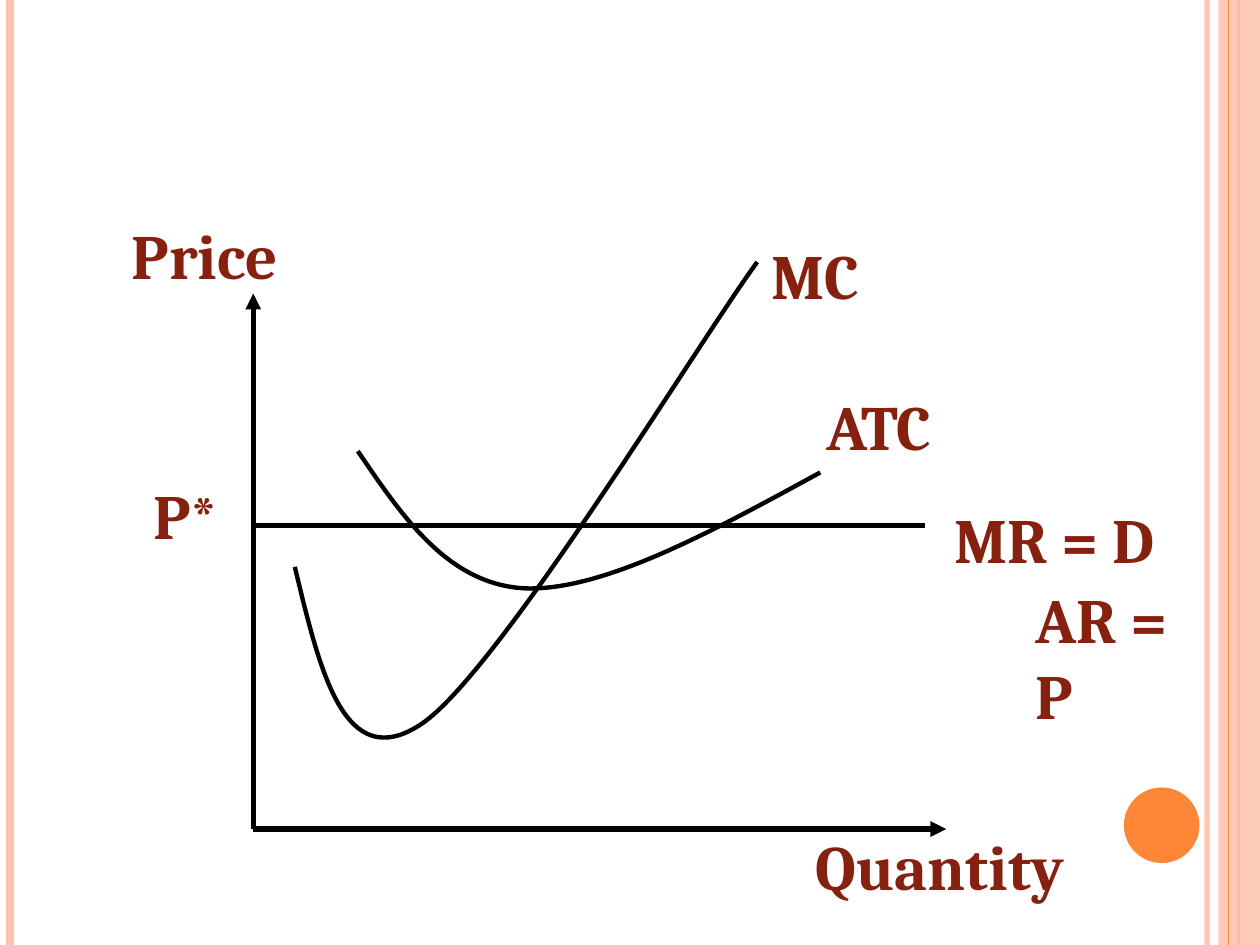
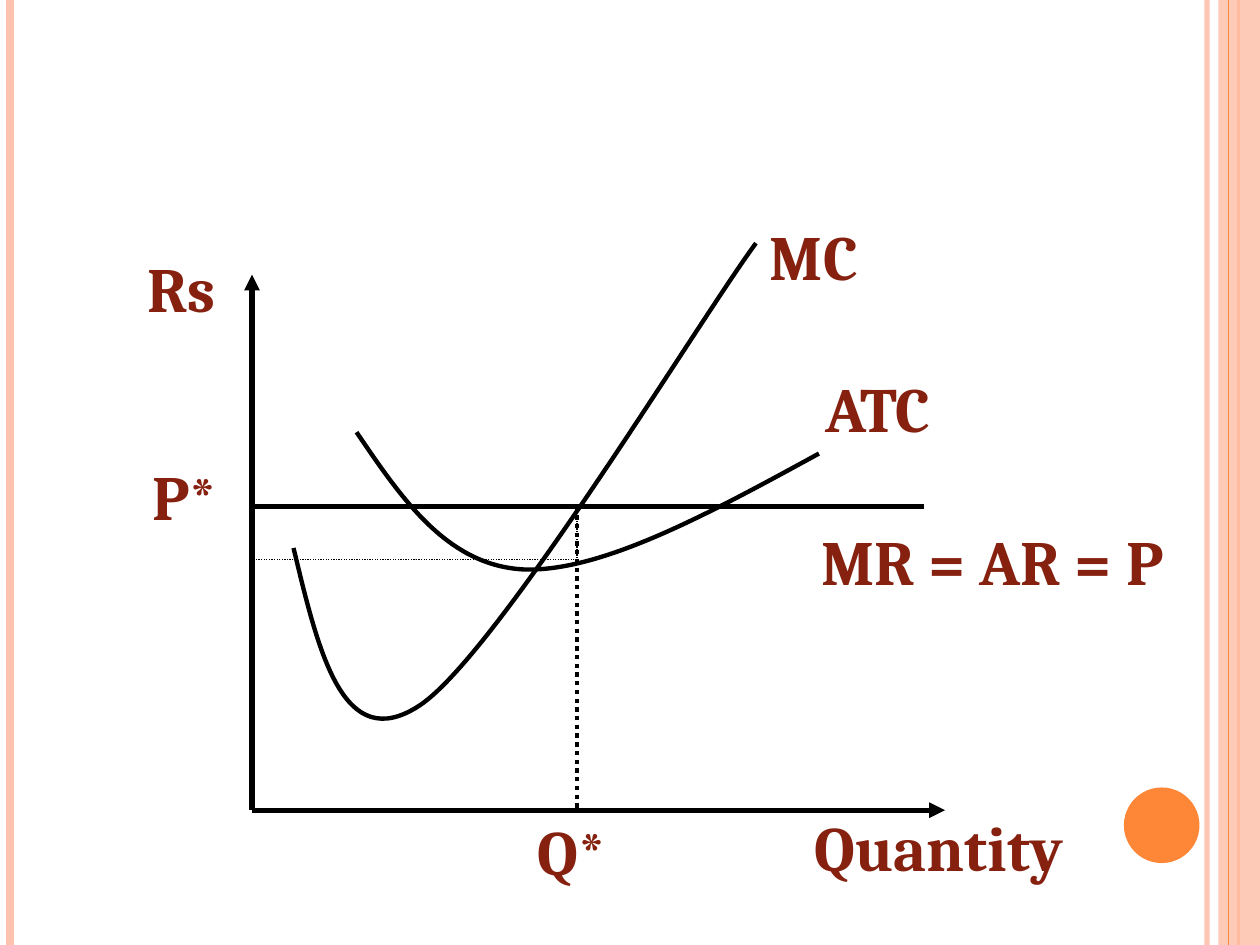
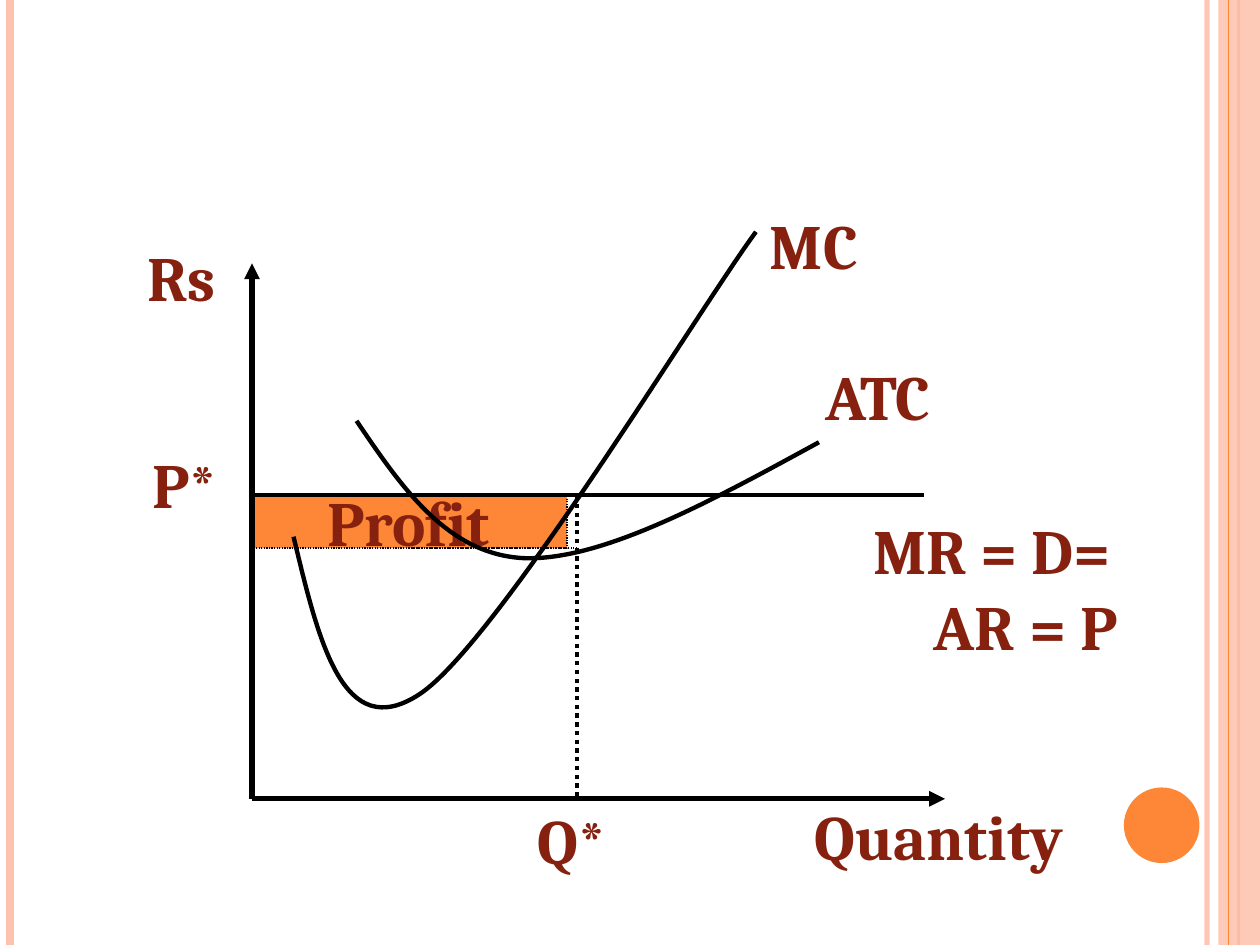
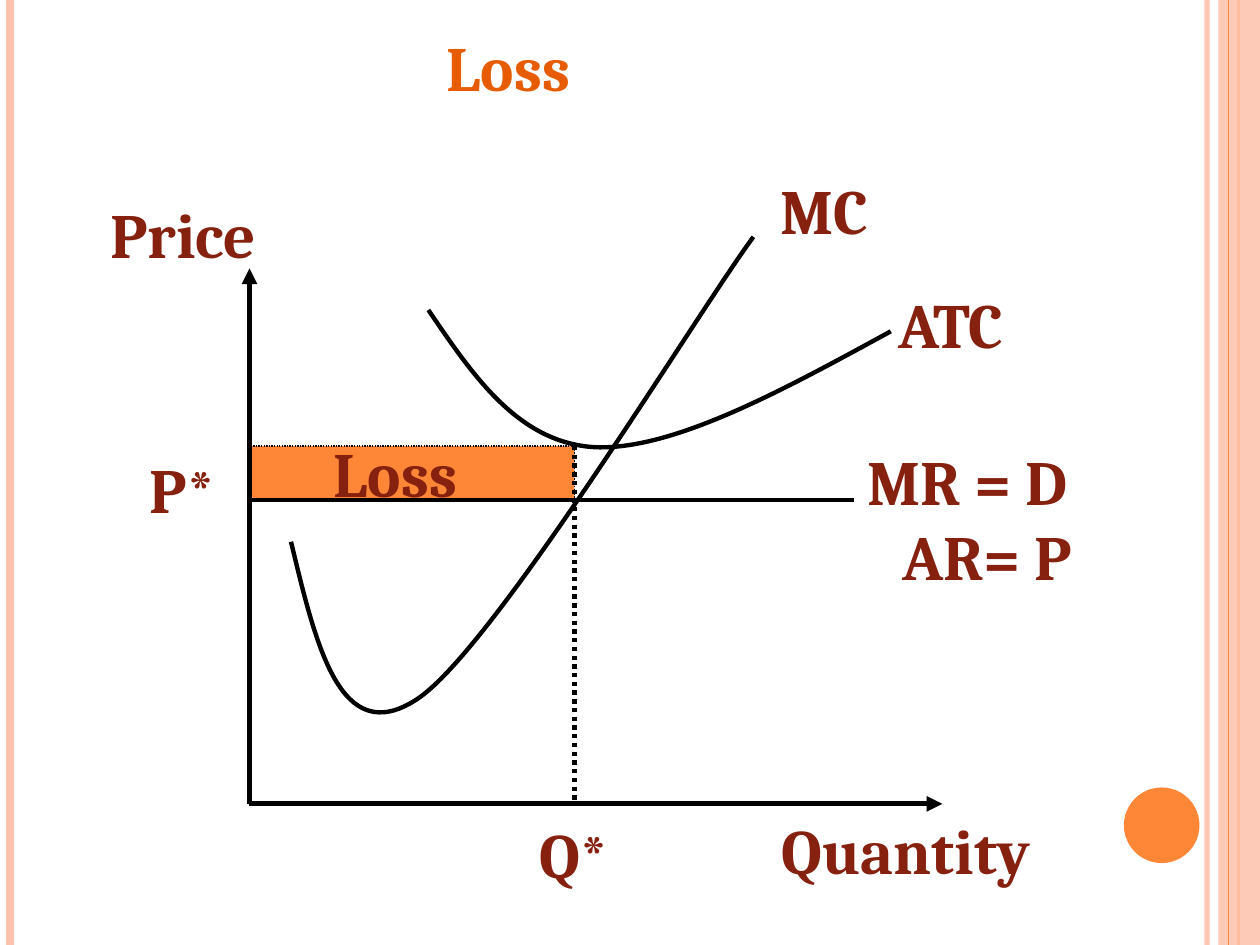
from lxml.etree import SubElement
from pptx import Presentation
from pptx.dml.color import RGBColor
from pptx.enum.dml import MSO_LINE
from pptx.enum.shapes import MSO_CONNECTOR, MSO_SHAPE
from pptx.enum.text import MSO_ANCHOR, MSO_AUTO_SIZE, PP_ALIGN
from pptx.oxml.ns import qn
from pptx.util import Inches, Pt

WIDE, HIGH = 10, 7.5
FONT, SIZE = "Cambria", 36
COLORS = {
    "ink": "000000", "paper": "FFFFFF", "label": "862110",
    "title": "E75C01", "accent": "FE8637", "pale": "FEC3AE",
}
MID, LEFT = PP_ALIGN.CENTER, PP_ALIGN.LEFT

# Master stripes: x, colour, points, opacity in percent
STRIPES = [
    (9.58, "pale", 3, 93), (0.08, "pale", 4.5, 100),
    (9.83, "accent", 1.5, 100), (9.75, "accent", 0.75, 100),
]

# Graph geometry: inches right of and above the origin of the axes
PRICE, COST = 2.41, 1.99
OUTPUT, AXIS_X, AXIS_Y = 2.58, 5.5, 4.25
MC = [(0.33, 2.08), (0.53, 1.25), (0.72, 0.43), (1.33, 0.83),
      (1.94, 1.23), (3.55, 3.89), (4, 4.5)]
ATC = [(0.83, 3), (1.19, 2.47), (1.55, 1.94), (2.16, 1.91),
       (2.78, 1.89), (3.64, 2.36), (4.5, 2.83)]

# Label widths, and usual places (left, top) from the origin
ROW = 0.71
WIDTHS = {"Price": 1.41, "Rs": 0.76, "MC": 0.92, "ATC": 1.09,
          "P*": 0.74, "Q*": 0.78, "Quantity": 2.22}
PLACES = {"MC": (4, 4.75), "ATC": (4.42, 3.55),
          "P*": (-0.9, 2.85), "Quantity": (4.34, 0.06)}
RUPEES = {"Rs": (-0.94, 4.5), "Q*": (2.15, 0.03)}

# note: left, top, width, height and lines of (text, indent, alignment)
# band: bottom, width, fill, outlined, text, text inset
GRAPHS = [
    {"origin": (2.01, 6.58), "labels": {"Price": (-1.09, 4.91)},
     "note": (5.16, 2.66, 2.4, 1.38),
     "lines": [("MR = D", 0, MID), ("AR = P", 0.95, LEFT)], "wrap": True,
     "band": (COST, OUTPUT, "paper", False, "", 0)},
    {"origin": (2, 6.43), "labels": RUPEES,
     "note": (4, 2.33, 3.75, ROW),
     "lines": [("MR = AR = P", 0, MID)], "wrap": True,
     "band": (COST, OUTPUT, "paper", True, "", 0), "drop": PRICE},
    {"origin": (2, 6.34), "labels": RUPEES,
     "note": (4.75, 2.33, 2.25, 1.31),
     "lines": [("MR = D=", 0, MID), ("AR = P", 0.53, MID)],
     "band": (COST, 2.5, "accent", True, "Profit", 0.6),
     "drop": PRICE, "cost": COST},
    {"origin": (1.98, 6.38), "title": "Loss",
     "labels": {"Price": (-1.23, 4.88), "MC": (4.1, 5.07),
                "ATC": (5.02, 4.16), "Quantity": (4.1, -0.01),
                "Q*": (2.19, -0.04)},
     "note": (4.78, 2.92, 1.95, 1.31),
     "lines": [("MR = D ", 0, MID), ("AR= P", 0.2, MID)],
     "band": (PRICE + 0.01, OUTPUT, "accent", True, "Loss", 0.67),
     "drop": 2.84, "cost": 2.84, "reach": 4.8, "shift": (0.59, 0.92)},
]


def rgb(name):
    return RGBColor.from_string(COLORS[name])


def fade(shape, share):
    """Make the shape's solid colour share percent opaque."""
    color = shape.element.spPr.find(".//" + qn("a:srgbClr"))
    SubElement(color, qn("a:alpha"), val=str(share * 1000))


def stroke(line, color, points, dotted=False):
    line.color.rgb = rgb(color)
    line.width = Pt(points)
    if dotted:
        line.dash_style = MSO_LINE.ROUND_DOT


def add_line(slide, start, end, color, points, dotted=False, arrow=None):
    """Draw a line; arrow is the end that bears a head."""
    line = slide.shapes.add_connector(
        MSO_CONNECTOR.STRAIGHT, *map(Inches, start + end))
    stroke(line.line, color, points, dotted)
    props = line.element.spPr
    if arrow:
        SubElement(props.find(qn("a:ln")), qn(arrow), type="triangle")
    SubElement(props, qn("a:effectLst"))
    return line


def add_shape(slide, kind, box, fill):
    shape = slide.shapes.add_shape(kind, *map(Inches, box))
    shape.shadow.inherit = False
    shape.fill.solid()
    shape.fill.fore_color.rgb = rgb(fill)
    shape.line.fill.background()
    return shape


def write(para, text, align=MID, color="label"):
    para.text = text
    para.alignment = align
    font = para.font
    font.name, font.size, font.bold = FONT, Pt(SIZE), True
    font.color.rgb = rgb(color)


def add_text(slide, box, lines, wrap=False):
    frame = slide.shapes.add_textbox(*map(Inches, box)).text_frame
    frame.word_wrap = wrap
    for i, (text, indent, align) in enumerate(lines):
        para = frame.add_paragraph() if i else frame.paragraphs[0]
        write(para, text, align)
        if indent:
            para._p.get_or_add_pPr().set("marL", str(Inches(indent)))
        if align == LEFT:
            para.space_before = Pt(3)


def add_curve(slide, points):
    """Draw cubic curves: a start, then three points for each piece."""
    points = [tuple(map(Inches, point)) for point in points]
    pen = slide.shapes.build_freeform(*points[0])
    pen.add_line_segments(points[1:], close=False)
    curve = pen.convert_to_shape()
    curve.shadow.inherit = False
    curve.fill.background()
    stroke(curve.line, "ink", 2.5)
    track = curve.element.spPr.find(".//" + qn("a:path"))
    steps = track.findall(qn("a:lnTo"))
    for i in range(0, len(steps), 3):
        bend = SubElement(track, qn("a:cubicBezTo"))
        for step in steps[i:i + 3]:
            bend.append(step[0])
            track.remove(step)


def dress(master, slide):
    """Draw the shared stripes and dot, then move them to the master."""
    parts = []
    for x, color, points, share in STRIPES:
        line = add_line(slide, (x, 0), (x, HIGH), color, points)
        fade(line, share)
        parts.append(line)
    edge = add_shape(slide, MSO_SHAPE.RECTANGLE, (9.67, 0, 0.33, HIGH), "pale")
    fade(edge, 87)
    dot = add_shape(slide, MSO_SHAPE.OVAL, (8.92, 6.25, 0.6, 0.6), "accent")
    parts[3:3] = [edge]
    for i, part in enumerate(parts + [dot]):
        part.element.find(".//" + qn("p:cNvPr")).set("id", str(100 + i))
        master.shapes.element.append(part.element)


def add_band(slide, spot, bottom, width, fill, outlined, text, inset):
    tall = 0.42
    box = spot(0, bottom + tall) + (width, tall)
    band = add_shape(slide, MSO_SHAPE.RECTANGLE, box, fill)
    if outlined:
        stroke(band.line, "ink", 0.75, True)
    if text:
        frame = band.text_frame
        frame.word_wrap = False
        frame.vertical_anchor = MSO_ANCHOR.MIDDLE
        frame.margin_left = Inches(inset)
        write(frame.paragraphs[0], text, LEFT)


def add_title(slide, text):
    title = slide.shapes.title
    title.left, title.top, title.width, title.height = map(
        Inches, (3.42, 0.17, 1.23, ROW))
    frame = title.text_frame
    frame.word_wrap = False
    frame.auto_size = MSO_AUTO_SIZE.NONE
    write(frame.paragraphs[0], text, color="title")


def add_graph(slide, graph):
    left, base = graph["origin"]

    def spot(x, y):
        return left + x, base - y

    def rule(start, end, points, dotted=False, arrow=None):
        add_line(slide, spot(*start), spot(*end), "ink", points, dotted, arrow)

    add_band(slide, spot, *graph["band"])
    rule((0, AXIS_Y), (0, 0), 3, arrow="a:headEnd")
    rule((0, 0), (AXIS_X, 0), 3, arrow="a:tailEnd")
    rule((0, PRICE), (graph.get("reach", 5.33), PRICE), 2.5)
    if "drop" in graph:
        rule((OUTPUT, graph["drop"]), (OUTPUT, 0), 2.5, True)
    if "cost" in graph:
        rule((OUTPUT, graph["cost"]), (0, graph["cost"]), 0.75, True)

    right, up = graph.get("shift", (0, 0))
    add_curve(slide, [spot(x, y) for x, y in MC])
    add_curve(slide, [spot(x + right, y + up) for x, y in ATC])

    for text, place in (PLACES | graph["labels"]).items():
        add_text(slide, spot(*place) + (WIDTHS[text], ROW), [(text, 0, MID)])
    x, y, wide, high = graph["note"]
    add_text(slide, spot(x, y) + (wide, high), graph["lines"],
             graph.get("wrap", False))


def main():
    deck = Presentation()
    deck.slide_width, deck.slide_height = Inches(WIDE), Inches(HIGH)
    titled, blank = deck.slide_layouts[5], deck.slide_layouts[6]
    for i, graph in enumerate(GRAPHS):
        slide = deck.slides.add_slide(titled if "title" in graph else blank)
        if i == 0:
            dress(deck.slide_master, slide)
        if "title" in graph:
            add_title(slide, graph["title"])
        add_graph(slide, graph)
    deck.save("out.pptx")


if __name__ == "__main__":
    main()
